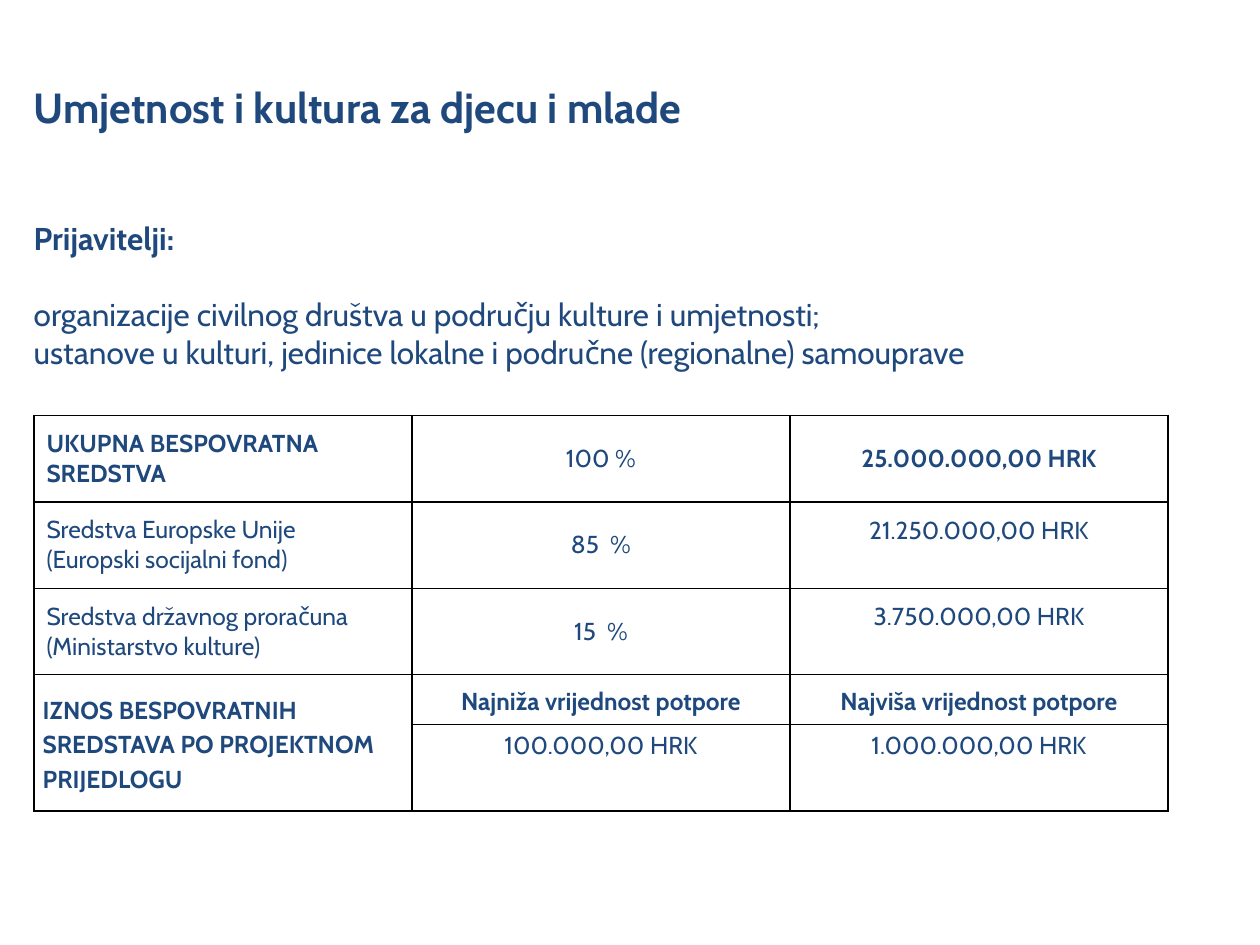
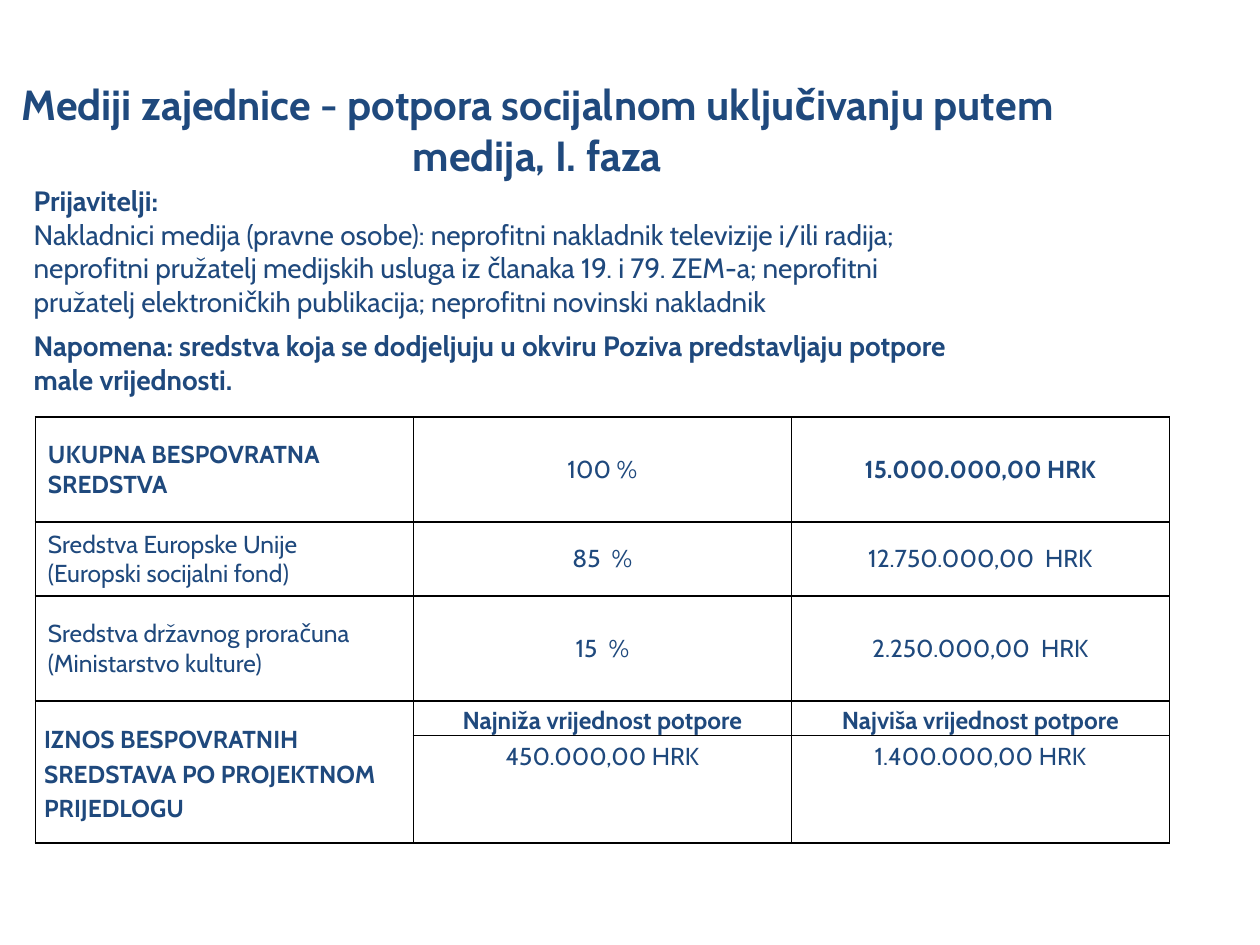
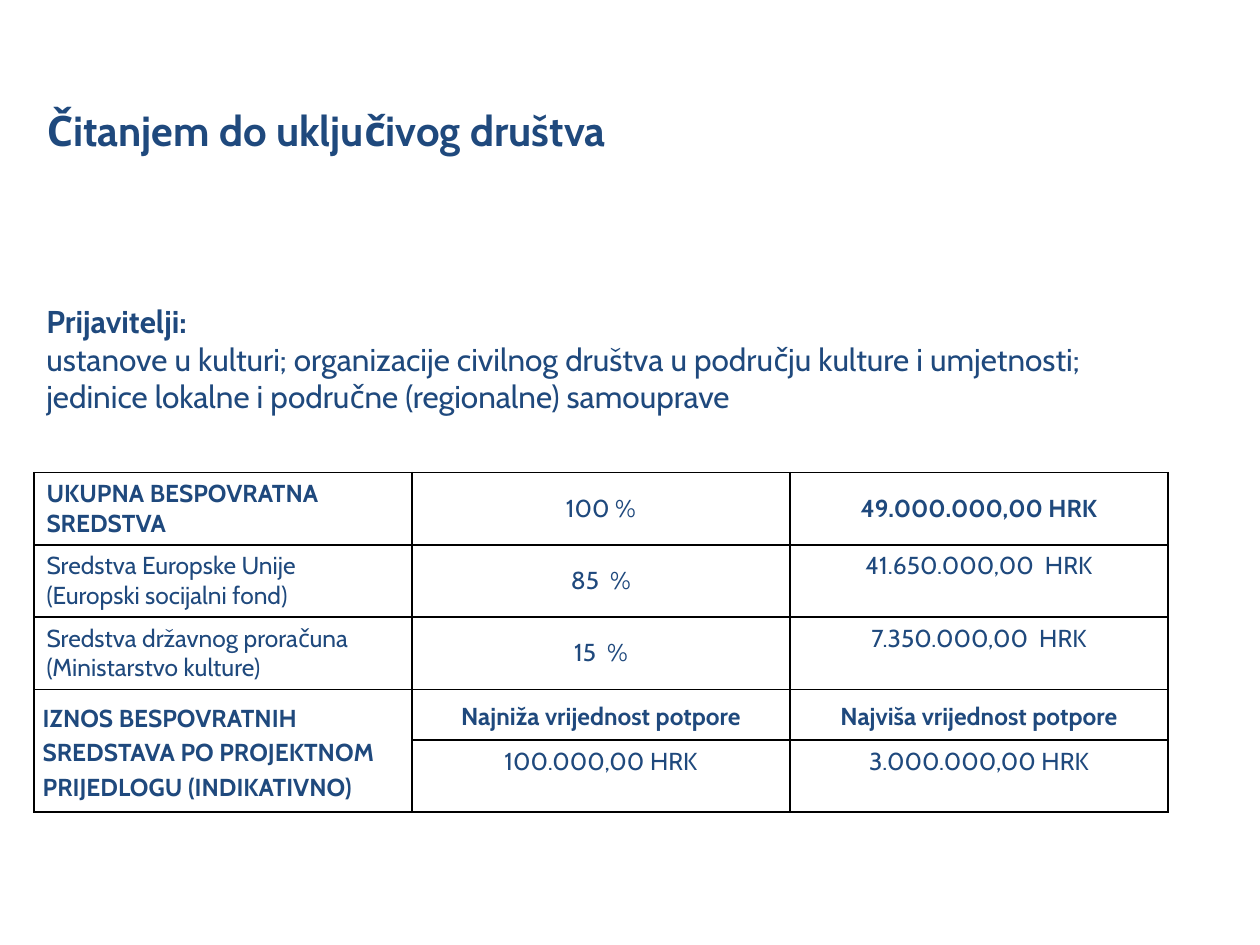
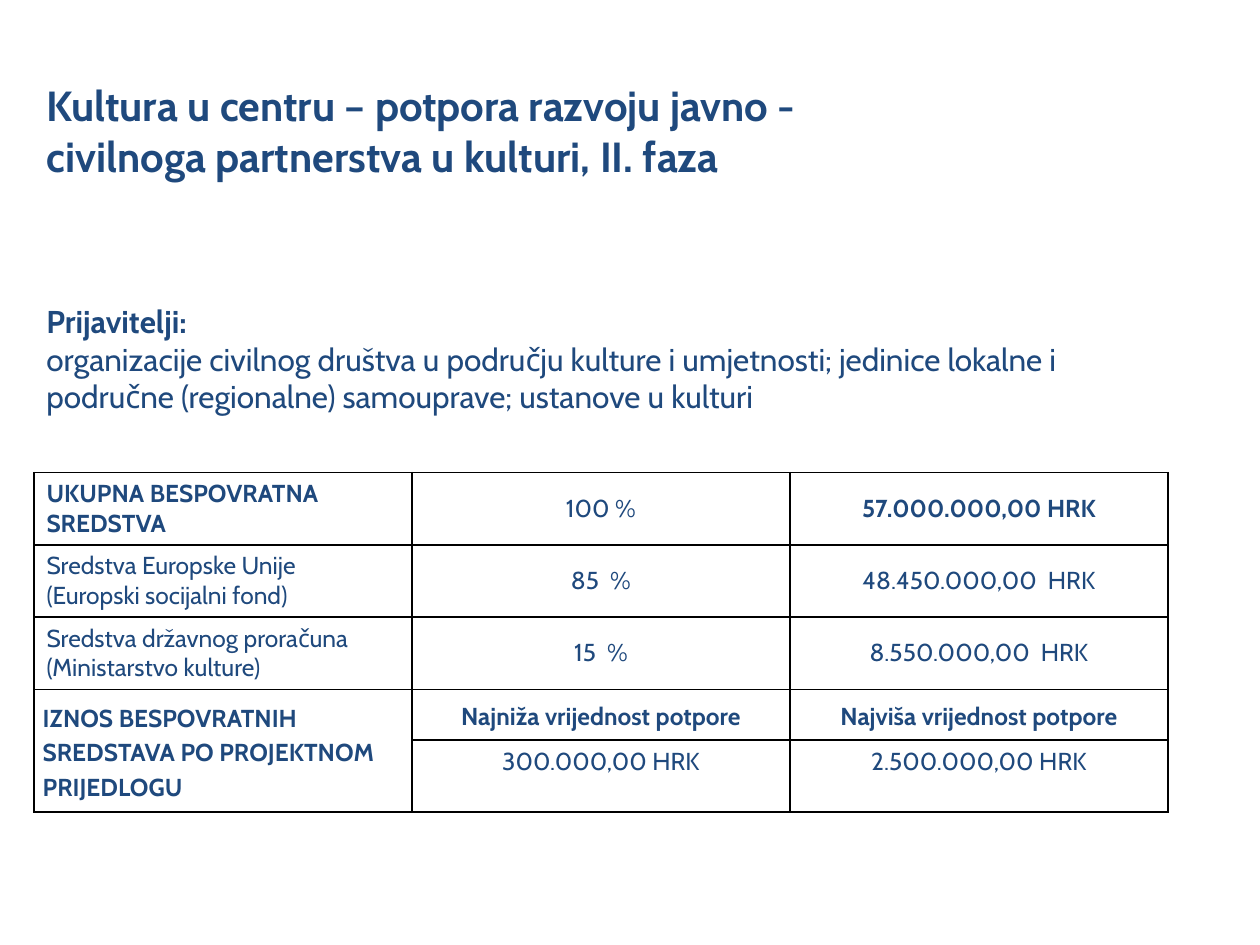
import pptx
import pptx.util
import pptx.dml.color
import pptx.enum.text
import pptx.oxml.ns
from lxml import etree

Pt = pptx.util.Pt
ALIGN = pptx.enum.text.PP_ALIGN
ANCHOR = pptx.enum.text.MSO_ANCHOR

COLOURS = {"text": "1F497D", "border": "000000", "background": "FFFFFF"}
FONT = "Cabin"
COLUMN_WIDTH = 216
CELL_LINE = 17  # height of one line of table text
BODY_LINE = 21.9  # height of one line of 18 pt text

SUPPORT_HEADS = ("Najniža vrijednost potpore", "Najviša vrijednost potpore")
PROPOSAL = "IZNOS BESPOVRATNIH SREDSTAVA PO PROJEKTNOM PRIJEDLOGU"
FUND_LABELS = (
    ["UKUPNA BESPOVRATNA SREDSTVA"],
    ["Sredstva Europske Unije", "(Europski socijalni fond)"],
    ["Sredstva državnog proračuna", "(Ministarstvo kulture)"],
)
SHARES = ("100 %", "85  %", "15  %")
COMPACT_ROWS = (41.2, 41.2, 41.2, 29, 41.2)

# One entry per call; a body line is (text, bold, space before)
CALLS = [
    {
        "title": "Umjetnost i kultura za djecu i mlade",
        "title_area": (12.2, 16.6, 655.2, 88.6),
        "body_area": (12.2, 99.4, 647.3, 138.2),
        "lead": BODY_LINE,
        "body": [
            ("Prijavitelji:", True, 0),
            ("organizacije civilnog društva u području kulture i umjetnosti;", False, BODY_LINE),
            ("ustanove u kulturi, jedinice lokalne i područne (regionalne) samouprave", False, 0),
        ],
        "table_at": (19.4, 237.4),
        "rows": (49.4, 49.4, 49.4, 28.6, 49.4),
        "amounts": ("25.000.000,00 HRK", "21.250.000,00 HRK", "3.750.000,00 HRK"),
        "raised": True,
        "limits": ("100.000,00 HRK", "1.000.000,00 HRK"),
    },
    {
        "title": "Mediji zajednice - potpora socijalnom uključivanju putem medija, I. faza",
        "title_area": (-11.5, 28.8, 637.2, 90),
        "title_align": ALIGN.CENTER,
        "body_area": (12.2, 101.5, 537.8, 151.2),
        "body_size": 16,
        "body": [
            ("Prijavitelji:", True, 0),
            ("Nakladnici medija (pravne osobe): neprofitni nakladnik televizije i/ili radija; "
             "neprofitni pružatelj medijskih usluga iz članaka 19. i 79. ZEM-a; neprofitni "
             "pružatelj elektroničkih publikacija; neprofitni novinski nakladnik", False, 0),
            ("Napomena: sredstva koja se dodjeljuju u okviru Poziva predstavljaju potpore "
             "male vrijednosti.", True, 6),
        ],
        "table_at": (20.2, 238.3),
        "rows": (60, 42.4, 60, 19.4, 61.4),
        "amounts": ("15.000.000,00 HRK", "12.750.000,00  HRK", "2.250.000,00  HRK"),
        "limits": ("450.000,00 HRK", "1.400.000,00 HRK"),
    },
    {
        "title": "Čitanjem do uključivog društva",
        "title_area": (19.4, 56, 656.6, 90),
        "title_anchor": ANCHOR.TOP,
        "body_area": (19.4, 146.9, 647.3, 116.6),
        "lead": BODY_LINE,
        "body": [
            ("Prijavitelji:", True, 0),
            ("ustanove u kulturi; organizacije civilnog društva u području kulture i "
             "umjetnosti; jedinice lokalne i područne (regionalne) samouprave", False, 0),
        ],
        "table_at": (19.4, 270),
        "rows": COMPACT_ROWS,
        "amounts": ("49.000.000,00 HRK", "41.650.000,00  HRK", "7.350.000,00  HRK"),
        "raised": True,
        "proposal": PROPOSAL + " (INDIKATIVNO)",
        "limits": ("100.000,00 HRK", "3.000.000,00 HRK"),
    },
    {
        "title": "Kultura u centru – potpora razvoju javno -\vcivilnoga partnerstva u kulturi, II. faza",
        "title_area": (19.4, 42, 656.6, 90),
        "title_anchor": ANCHOR.TOP,
        "body_area": (19.4, 146.9, 647.3, 116.6),
        "lead": BODY_LINE,
        "body": [
            ("Prijavitelji:", True, 0),
            ("organizacije civilnog društva u području kulture i umjetnosti; jedinice lokalne i "
             "područne (regionalne) samouprave; ustanove u kulturi", False, 0),
        ],
        "table_at": (19.4, 270),
        "rows": COMPACT_ROWS,
        "amounts": ("57.000.000,00 HRK", "48.450.000,00  HRK", "8.550.000,00  HRK"),
        "limits": ("300.000,00 HRK", "2.500.000,00 HRK"),
    },
]


def set_all(target, values):
    for name, value in values.items():
        setattr(target, name, value)


def write_para(para, text, size, bold, **layout):
    para.text = text
    set_all(para, layout)
    for font in [para.font] + [span.font for span in para.runs]:
        set_all(font, {"name": FONT, "size": Pt(size), "bold": bold})
        font.color.rgb = pptx.dml.color.RGBColor.from_string(COLOURS["text"])


def next_para(frame, index):
    return frame.add_paragraph() if index else frame.paragraphs[0]


def add_title(page, call):
    box = page.shapes.title
    set_all(box, dict(zip(("left", "top", "width", "height"), map(Pt, call["title_area"]))))
    set_all(box.text_frame, {
        "word_wrap": True,
        "auto_size": pptx.enum.text.MSO_AUTO_SIZE.NONE,
        "vertical_anchor": call.get("title_anchor", ANCHOR.MIDDLE),
    })
    write_para(box.text_frame.paragraphs[0], call["title"], 24, True,
               alignment=call.get("title_align", ALIGN.LEFT))


def add_body(page, call):
    box = page.shapes.add_textbox(*map(Pt, call["body_area"]))
    frame = box.text_frame
    set_all(frame, {"word_wrap": True, "margin_top": Pt(3.6 + call.get("lead", 0))})
    for index, (text, bold, gap) in enumerate(call["body"]):
        layout = {"space_before": Pt(gap)} if gap else {}
        write_para(next_para(frame, index), text, call.get("body_size", 18), bold, **layout)


def add_borders(cell):
    properties = cell._tc.get_or_add_tcPr()
    qn = pptx.oxml.ns.qn
    for index, side in enumerate(("a:lnL", "a:lnR", "a:lnT", "a:lnB")):
        line = etree.Element(qn(side), w=str(Pt(1)))
        fill = etree.SubElement(line, qn("a:solidFill"))
        etree.SubElement(fill, qn("a:srgbClr"), val=COLOURS["border"])
        properties.insert(index, line)


def write_cell(cell, lines, bold=False, align=ALIGN.CENTER, spacing=None, **layout):
    set_all(cell, {"vertical_anchor": ANCHOR.MIDDLE, **layout})
    for index, text in enumerate(lines):
        write_para(next_para(cell.text_frame, index), text, 14, bold,
                   alignment=align, line_spacing=spacing)


def add_funding_table(page, call):
    heights = call["rows"]
    left, top = call["table_at"]
    table = page.shapes.add_table(len(heights), 3, Pt(left), Pt(top),
                                  Pt(3 * COLUMN_WIDTH), Pt(sum(heights))).table
    set_all(table, {"first_row": False, "horz_banding": False})
    for column in table.columns:
        column.width = Pt(COLUMN_WIDTH)
    for row, height in zip(table.rows, heights):
        row.height = Pt(height)
    for cell in table.iter_cells():
        cell.fill.background()
        add_borders(cell)

    # Sources of funding
    for row, (label, share, amount) in enumerate(zip(FUND_LABELS, SHARES, call["amounts"])):
        total = row == 0
        raised = call.get("raised", False) and not total
        layout = {"margin_bottom": Pt(3.6 + CELL_LINE)} if raised else {}
        write_cell(table.cell(row, 0), label, total, ALIGN.LEFT)
        write_cell(table.cell(row, 1), [share])
        write_cell(table.cell(row, 2), [amount], total, **layout)

    # Limits for one proposal
    tight = {"margin_left": Pt(5), "margin_right": Pt(5), "margin_top": 0, "margin_bottom": 0}
    table.cell(3, 0).merge(table.cell(4, 0))
    write_cell(table.cell(3, 0), [call.get("proposal", PROPOSAL)], True, ALIGN.LEFT, 1.15, **tight)
    for column, (head, limit) in enumerate(zip(SUPPORT_HEADS, call["limits"]), 1):
        write_cell(table.cell(3, column), [head], True, spacing=1.15, **tight)
        write_cell(table.cell(4, column), [limit], vertical_anchor=ANCHOR.TOP)


def main():
    deck = pptx.Presentation()
    set_all(deck, {"slide_width": Pt(720), "slide_height": Pt(540)})
    background = deck.slide_master.background.fill
    background.solid()
    background.fore_color.rgb = pptx.dml.color.RGBColor.from_string(COLOURS["background"])
    for call in CALLS:
        page = deck.slides.add_slide(deck.slide_layouts[5])
        add_title(page, call)
        add_funding_table(page, call)
        add_body(page, call)
    deck.save("out.pptx")


if __name__ == "__main__":
    main()
